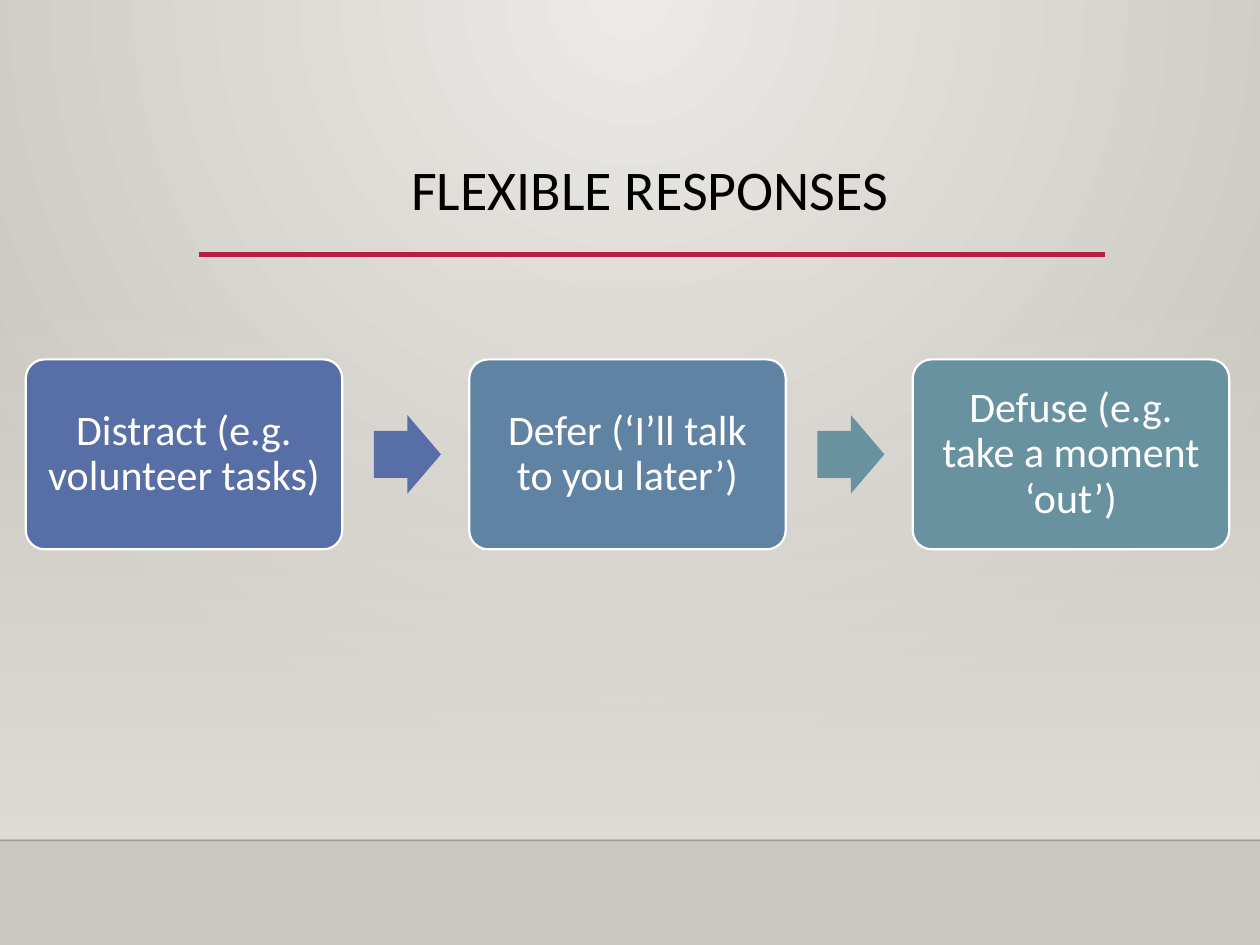
from dataclasses import dataclass

from lxml.etree import SubElement
from pptx import Presentation
from pptx.dml.color import RGBColor
from pptx.enum.shapes import MSO_CONNECTOR, MSO_SHAPE
from pptx.enum.text import MSO_ANCHOR, PP_ALIGN
from pptx.oxml.ns import qn
from pptx.util import Cm, Pt


@dataclass(frozen=True)
class Theme:
    font: str = "Calibri"
    title_size: int = 32
    step_size: int = 24
    text: str = "000000"
    light: str = "FFFFFF"
    glow: str = "ECEAE7"
    edge: str = "CAC7C1"
    wall: str = "DFDBD5"
    floor_line: str = "000001"
    accent: str = "B71E42"
    steps: tuple = ("586EA6", "6083A3", "6892A0")


class SlideBuilder:
    def __init__(self, slide, theme):
        self.slide = slide
        self.theme = theme

    def set_stops(self, fill, colors):
        fill.gradient()
        for stop, color in zip(fill.gradient_stops, colors):
            stop.color.rgb = RGBColor.from_string(color)

    def set_alpha(self, element, percent):
        color = next(element.iter(qn("a:srgbClr")))
        SubElement(color, qn("a:alpha")).set("val", str(percent * 1000))

    def background(self):
        self.set_stops(self.slide.background.fill, (self.theme.glow, self.theme.edge))
        gradient = next(self.slide.element.iter(qn("a:gradFill")))
        gradient.remove(gradient.find(qn("a:lin")))
        radial = SubElement(gradient, qn("a:path"))
        radial.set("path", "circle")
        focus = SubElement(radial, qn("a:fillToRect"))
        for side, percent in zip("ltrb", (43, 0, 43, 100)):
            focus.set(side, str(percent * 1000))

    def shape(self, kind, left, top, width, height, color=None):
        shape = self.slide.shapes.add_shape(
            kind, Cm(left), Cm(top), Cm(width), Cm(height))
        shape.shadow.inherit = False
        shape.line.fill.background()
        if color:
            shape.fill.solid()
            shape.fill.fore_color.rgb = RGBColor.from_string(color)
        return shape

    def wall(self, top, width, height):
        shape = self.shape(MSO_SHAPE.RECTANGLE, 0, top, width, height)
        self.set_stops(shape.fill, (self.theme.wall, self.theme.wall))
        shape.fill.gradient_angle = 270
        self.set_alpha(shape.element, 0)

    def rule(self, left, right, y, color, weight, opacity=100):
        connector = self.slide.shapes.add_connector(
            MSO_CONNECTOR.STRAIGHT, Cm(left), Cm(y), Cm(right), Cm(y))
        connector.line.color.rgb = RGBColor.from_string(color)
        connector.line.width = Pt(weight)
        SubElement(connector.element.spPr, qn("a:effectLst"))
        if opacity < 100:
            self.set_alpha(connector.element, opacity)

    def set_text(self, shape, text, size, color):
        frame = shape.text_frame
        frame.word_wrap = True
        paragraph = frame.paragraphs[0]
        paragraph.text = text
        paragraph.alignment = PP_ALIGN.CENTER
        paragraph.line_spacing = 0.9
        paragraph.font.name = self.theme.font
        paragraph.font.size = Pt(size)
        paragraph.font.color.rgb = RGBColor.from_string(color)
        return frame

    def title(self, text, left, top, width, height):
        box = self.slide.shapes.add_textbox(Cm(left), Cm(top), Cm(width), Cm(height))
        self.set_text(box, text, self.theme.title_size, self.theme.text)

    def step(self, text, left, top, width, height, color):
        box = self.shape(MSO_SHAPE.ROUNDED_RECTANGLE, left, top, width, height, color)
        box.adjustments[0] = 0.1
        box.line.color.rgb = RGBColor.from_string(self.theme.light)
        box.line.width = Pt(1.25)
        frame = self.set_text(box, text, self.theme.step_size, self.theme.light)
        frame.vertical_anchor = MSO_ANCHOR.MIDDLE
        frame.margin_left = frame.margin_right = Cm(0.25)
        frame.margin_top = frame.margin_bottom = Cm(0.25)

    def arrow(self, left, top, width, height, color):
        arrow = self.shape(MSO_SHAPE.RIGHT_ARROW, left, top, width, height, color)
        arrow.adjustments[0] = 0.6
        arrow.adjustments[1] = 0.5


def main():
    presentation = Presentation()
    presentation.slide_width = Cm(25.4)
    presentation.slide_height = Cm(19.05)
    theme = Theme()
    builder = SlideBuilder(
        presentation.slides.add_slide(presentation.slide_layouts[6]), theme)

    # Backdrop: radial glow, wall fading in downwards, floor edge
    builder.background()
    builder.wall(5.6, 25.4, 11.33)
    builder.rule(0, 25.4, 16.94, theme.floor_line, 1, opacity=20)

    # Title with its rule
    builder.rule(4.01, 22.27, 5.13, theme.accent, 2.5)
    builder.title("FLEXIBLE RESPONSES", 2.31, 3.15, 21.59, 3.18)

    # Three steps, with an arrow between neighbours
    steps = (
        "Distract (e.g. volunteer tasks)",
        "Defer (‘I’ll talk to you later’)",
        "Defuse (e.g. take a moment ‘out’)",
    )
    first_left, pitch, middle = 0.52, 8.94, 9.16
    box_width, box_height = 6.38, 3.83
    arrow_width, arrow_height, arrow_gap = 1.35, 1.58, 0.64
    arrow_colors = (theme.steps[0], theme.steps[2])
    for index, text in enumerate(steps):
        left = first_left + index * pitch
        builder.step(text, left, middle - box_height / 2, box_width, box_height,
                     theme.steps[index])
        if index < len(arrow_colors):
            builder.arrow(left + box_width + arrow_gap, middle - arrow_height / 2,
                          arrow_width, arrow_height, arrow_colors[index])

    presentation.save("out.pptx")


if __name__ == "__main__":
    main()
